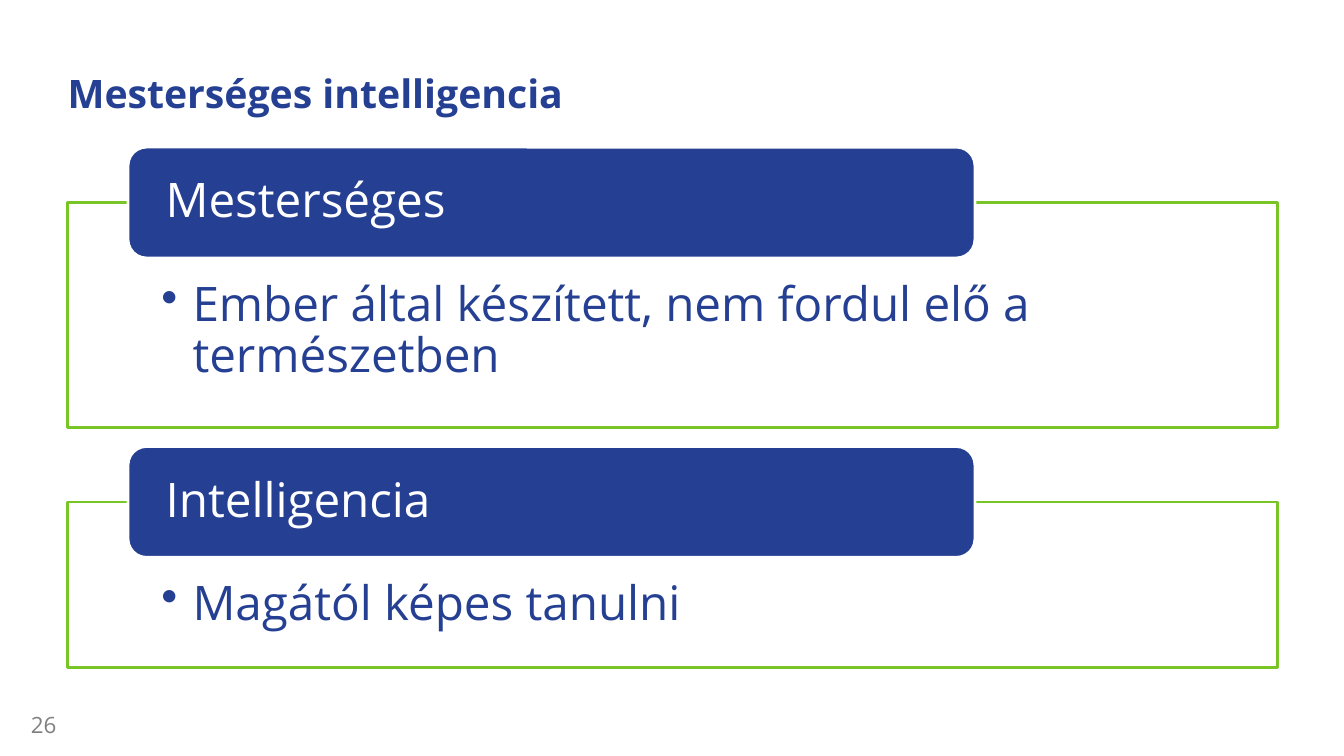
"""Build the slide that explains the two words of artificial intelligence."""
from lxml.etree import SubElement
from pptx import Presentation
from pptx.dml.color import RGBColor
from pptx.enum.shapes import MSO_SHAPE
from pptx.enum.text import MSO_ANCHOR, PP_ALIGN
from pptx.oxml.ns import qn
from pptx.util import Inches, Pt

BLUE, GREEN, WHITE, GRAY = "254093", "78C525", "FFFFFF", "808080"


def write(shape, text, size, color, anchor, insets=(0, 0, 0, 0), bold=False, bullet=False):
    frame = shape.text_frame
    frame.word_wrap = True
    frame.vertical_anchor = anchor
    frame.margin_left, frame.margin_top, frame.margin_right, frame.margin_bottom = map(Inches, insets)
    paragraph = frame.paragraphs[0]
    paragraph.text = text
    paragraph.alignment = PP_ALIGN.LEFT
    paragraph.line_spacing = 0.9
    if bullet:
        properties = paragraph._p.get_or_add_pPr()
        properties.set("marL", str(Inches(0.31)))
        properties.set("indent", str(-Inches(0.31)))
        SubElement(properties, qn("a:buChar"), char="•")
    paragraph.font.name = "Open Sans"
    paragraph.font.size = Pt(size)
    paragraph.font.bold = bold
    paragraph.font.color.rgb = RGBColor.from_string(color)
    return paragraph


def add_box(preset, left, top, width, height, fill, line):
    box = slide.shapes.add_shape(preset, Inches(left), Inches(top), Inches(width), Inches(height))
    box.shadow.inherit = False
    box.fill.solid()
    box.fill.fore_color.rgb = RGBColor.from_string(fill)
    box.line.color.rgb = RGBColor.from_string(line)
    box.line.width = Pt(2)
    return box


presentation = Presentation()
presentation.slide_width = Inches(13.33)
presentation.slide_height = Inches(7.5)
slide = presentation.slides.add_slide(presentation.slide_layouts[5])

title = slide.shapes.title
title.left, title.top, title.width, title.height = map(Inches, (0.67, 0.33, 10.42, 0.83))
write(title, "Mesterséges intelligencia", 28, BLUE, MSO_ANCHOR.BOTTOM, bold=True)

terms = [
    ("Mesterséges", "Ember által készített, nem fordul elő a természetben", 2.01, 2.23),
    ("Intelligencia", "Magától képes tanulni", 4.98, 1.64),
]
for term, meaning, top, height in terms:
    meaning_box = add_box(MSO_SHAPE.RECTANGLE, 0.67, top, 12, height, WHITE, GREEN)
    write(meaning_box, meaning, 34, BLUE, MSO_ANCHOR.TOP, (0.93, 0.77, 0.93, 0.26), bullet=True)
    term_box = add_box(MSO_SHAPE.ROUNDED_RECTANGLE, 1.27, top - 0.55, 8.4, 1.1, BLUE, WHITE)
    write(term_box, term, 34, WHITE, MSO_ANCHOR.MIDDLE, (0.32, 0, 0.32, 0))

page_number = slide.shapes.add_textbox(Inches(0.23), Inches(7.08), Inches(0.33), Inches(0.24))
number_line = write(page_number, "26", 16, GRAY, MSO_ANCHOR.BOTTOM)
number_line.alignment = PP_ALIGN.RIGHT
number_line.line_spacing = 1.0
page_number.text_frame.word_wrap = False

presentation.save("out.pptx")
